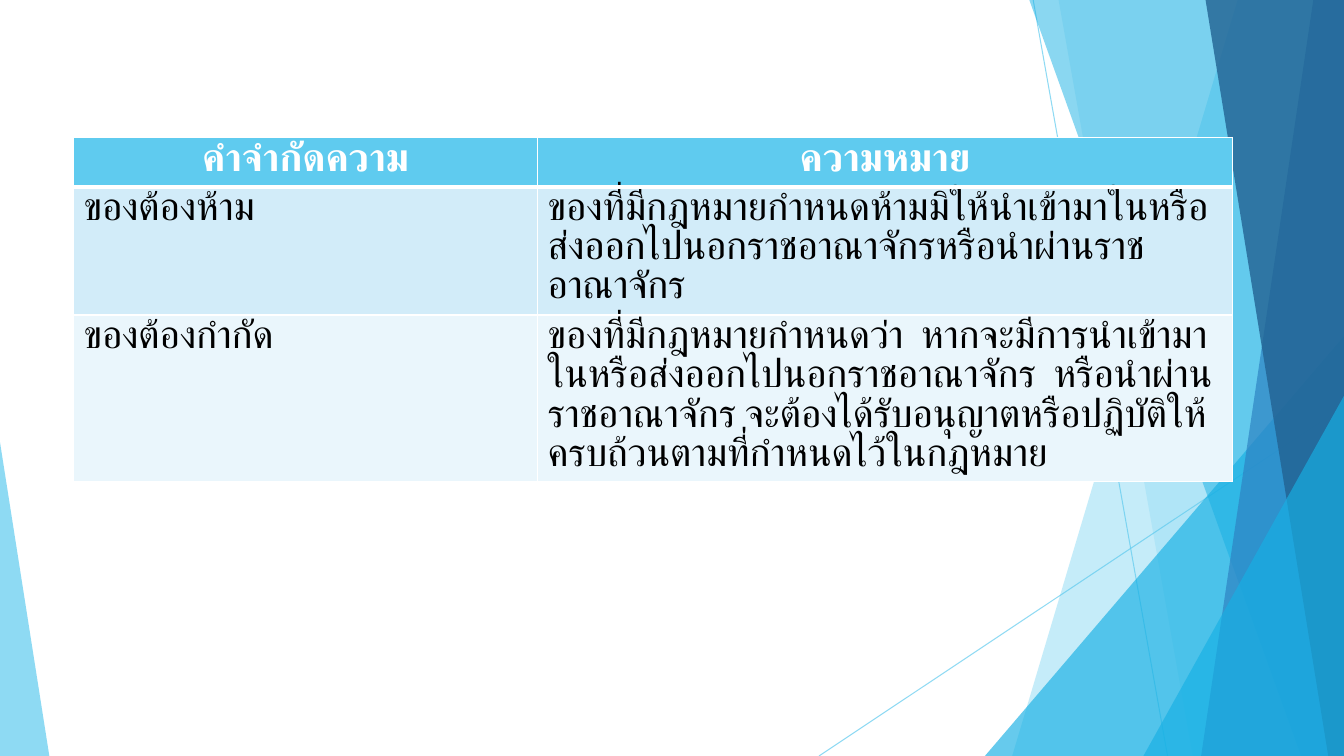
from lxml import etree
from pptx import Presentation
from pptx.dml.color import RGBColor
from pptx.enum import lang, shapes, text
from pptx.oxml import ns
from pptx.util import Pt

PX = 9525
WIDTH, HEIGHT = 1280, 720
COLORS = {
    "sky": "5FCBEF", "cyan": "17B0E4", "blue": "2E83C3", "navy": "226292",
    "pale": "D2ECF9", "paler": "EAF6FC", "white": "FFFFFF", "black": "000000",
}
FONT = "Calibri"
DEFINITIONS = [
    ("คำจำกัดความ", "ความหมาย"),
    ("ของต้องห้าม",
     "ของที่มีกฎหมายกำหนดห้ามมิให้นำเข้ามาในหรือส่งออกไปนอกราชอาณาจักรหรือนำผ่านราชอาณาจักร"),
    ("ของต้องกำกัด",
     "ของที่มีกฎหมายกำหนดว่า  หากจะมีการนำเข้ามาในหรือส่งออกไปนอกราชอาณาจักร  "
     "หรือนำผ่านราชอาณาจักร จะต้องได้รับอนุญาตหรือปฏิบัติให้ครบถ้วนตามที่กำหนดไว้ในกฎหมาย"),
]
ROW_FILLS = ["sky", "pale", "paler"]
ROW_HEIGHTS = [47, 122, 159]
COLUMN_WIDTHS = [442, 662]


def rgb(name):
    return RGBColor.from_string(COLORS[name])


def set_opacity(fill_owner, percent):
    for color in fill_owner.iter(ns.qn("a:srgbClr")):
        etree.SubElement(color, ns.qn("a:alpha"), val=str(percent * 1000))


def paint(facet, color, opacity):
    facet.shadow.inherit = False
    facet.fill.solid()
    facet.fill.fore_color.rgb = rgb(color)
    facet.line.fill.background()
    set_opacity(facet._element.spPr, opacity)


def add_ray(slide, start, end):
    ends = [value * PX for value in (*start, *end)]
    ray = slide.shapes.add_connector(shapes.MSO_CONNECTOR.STRAIGHT, *ends)
    ray.line.color.rgb = rgb("sky")
    ray.line.width = Pt(0.75)
    properties = ray._element.spPr
    set_opacity(properties, 70)
    etree.SubElement(properties, ns.qn("a:effectLst"))


def add_band(slide, top_x, bottom_x, color, opacity):
    """Fill from a slanted left edge to the right side of the slide."""
    outline = slide.shapes.build_freeform(top_x, -1, scale=PX)
    outline.add_line_segments([(WIDTH, -1), (WIDTH, HEIGHT), (bottom_x, HEIGHT)])
    paint(outline.convert_to_shape(), color, opacity)


def add_corner(slide, left, top, width, apex, color, opacity):
    """Triangle standing on the bottom edge; apex is its place along the width."""
    box = [value * PX for value in (left, top, width, HEIGHT - top)]
    corner = slide.shapes.add_shape(shapes.MSO_SHAPE.ISOSCELES_TRIANGLE, *box)
    corner.adjustments[0] = apex
    paint(corner, color, opacity)


def set_borders(cell, widths):
    properties = cell._tc.get_or_add_tcPr()
    for index, (side, width) in enumerate(widths.items()):
        border = etree.Element(ns.qn(f"a:ln{side}"), w=str(Pt(width)))
        fill = etree.SubElement(border, ns.qn("a:solidFill"))
        etree.SubElement(fill, ns.qn("a:srgbClr"), val=COLORS["white"])
        properties.insert(index, border)


def write_cell(cell, words, is_header):
    paragraph = cell.text_frame.paragraphs[0]
    paragraph.alignment = text.PP_ALIGN.CENTER if is_header else text.PP_ALIGN.LEFT
    paragraph.line_spacing = Pt(28)
    run = paragraph.add_run()
    run.text = words
    style = {"name": FONT, "size": Pt(28), "bold": is_header,
             "language_id": lang.MSO_LANGUAGE_ID.THAI}
    for attribute, value in style.items():
        setattr(run.font, attribute, value)
    run.font.color.rgb = rgb("white" if is_header else "black")
    etree.SubElement(run._r.get_or_add_rPr(), ns.qn("a:cs"), typeface=FONT)


def add_definitions(slide, left, top):
    box = [value * PX for value in (left, top, sum(COLUMN_WIDTHS), sum(ROW_HEIGHTS))]
    definitions = slide.shapes.add_table(
        len(DEFINITIONS), len(COLUMN_WIDTHS), *box).table
    for column, width in zip(definitions.columns, COLUMN_WIDTHS):
        column.width = width * PX
    for row_index, entry in enumerate(DEFINITIONS):
        definitions.rows[row_index].height = ROW_HEIGHTS[row_index] * PX
        for column_index, words in enumerate(entry):
            cell = definitions.cell(row_index, column_index)
            cell.fill.solid()
            cell.fill.fore_color.rgb = rgb(ROW_FILLS[row_index])
            set_borders(cell, {"L": 1, "R": 1,
                               "T": 3 if row_index == 1 else 1,
                               "B": 3 if row_index == 0 else 1})
            write_cell(cell, words, row_index == 0)


def add_backdrop(slide):
    add_ray(slide, (984, 0), (1112, HEIGHT))
    add_ray(slide, (WIDTH, 387), (780, HEIGHT))
    add_band(slide, 1179, 964, "sky", 36)
    add_band(slide, 1008, 1136, "sky", 20)
    add_corner(slide, 938, 320, 342, 1, "cyan", 66)
    add_band(slide, 980, 1239, "cyan", 50)
    add_band(slide, 1251, 1144, "blue", 70)
    add_band(slide, 1148, 1265, "navy", 80)
    add_corner(slide, 1089, 377, 191, 1, "cyan", 66)
    add_corner(slide, 0, 421, 47, 0, "sky", 70)


def main():
    deck = Presentation()
    deck.slide_width, deck.slide_height = WIDTH * PX, HEIGHT * PX
    slide = deck.slides.add_slide(deck.slide_layouts[6])
    add_backdrop(slide)
    add_definitions(slide, 70, 131)
    deck.save("out.pptx")


if __name__ == "__main__":
    main()
